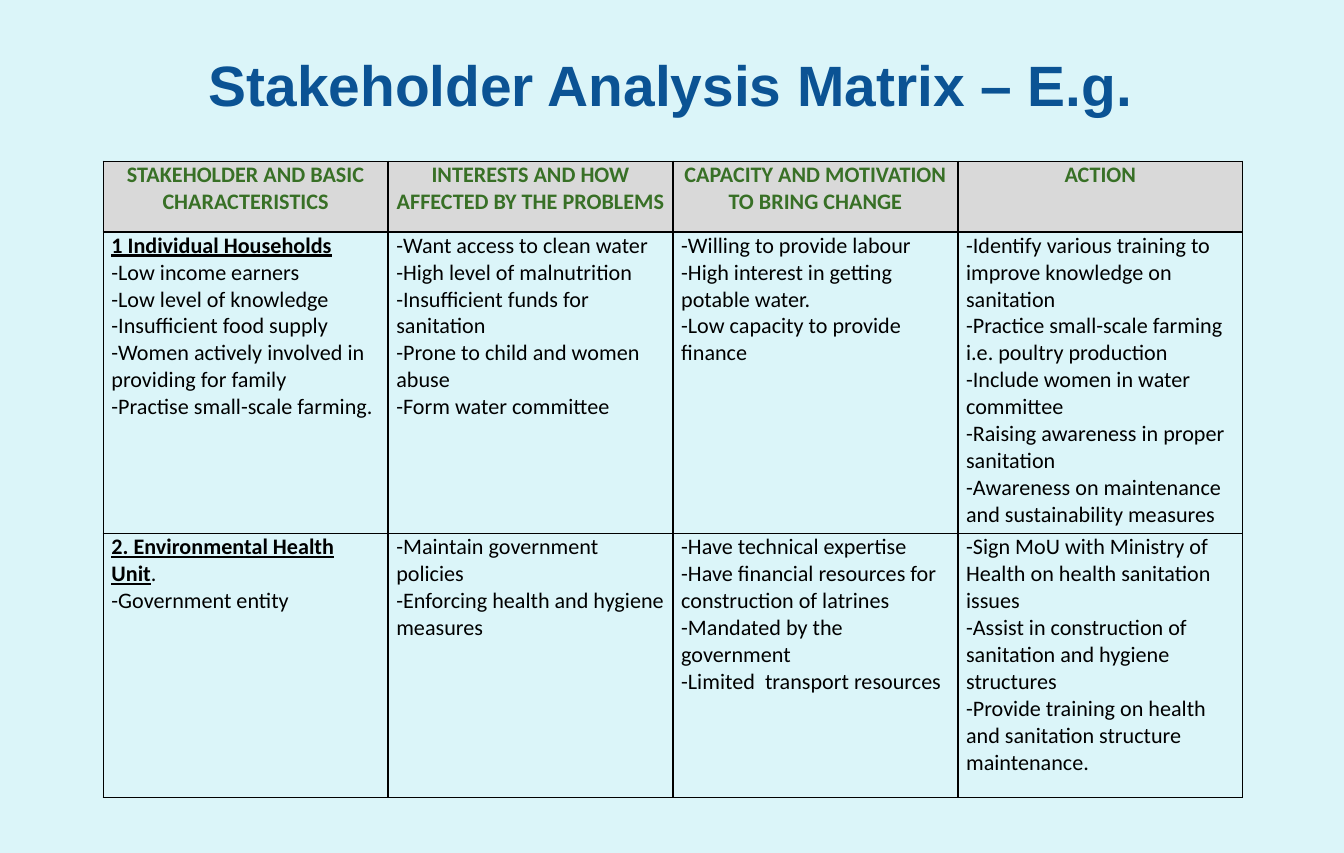
from lxml import etree
from pptx import Presentation
from pptx import util as u
from pptx.dml.color import RGBColor
from pptx.enum import text
from pptx.oxml import ns

# Content: a heading is (underlined text, plain ending)
TITLE = "Stakeholder Analysis Matrix – E.g."
HEADERS = [
    "STAKEHOLDER AND BASIC CHARACTERISTICS",
    "INTERESTS AND HOW AFFECTED BY THE PROBLEMS",
    "CAPACITY AND MOTIVATION TO BRING CHANGE",
    "ACTION",
]
STAKEHOLDERS = [
    [
        [("1 Individual Households", ""),
         "-Low income earners",
         "-Low level of knowledge",
         "-Insufficient food supply",
         "-Women actively involved in providing for family",
         "-Practise small-scale farming."],
        ["-Want access to clean water",
         "-High level of malnutrition",
         "-Insufficient funds for sanitation",
         "-Prone to child and women abuse",
         "-Form water committee"],
        ["-Willing to provide labour",
         "-High interest in getting potable water.",
         "-Low capacity to provide finance"],
        ["-Identify various training to improve knowledge on sanitation",
         "-Practice small-scale farming i.e. poultry production",
         "-Include women in water committee",
         "-Raising awareness in proper sanitation",
         "-Awareness on maintenance and sustainability measures"],
    ],
    [
        [("2. Environmental Health Unit", "."),
         "-Government entity"],
        ["-Maintain government policies",
         "-Enforcing health and hygiene measures"],
        ["-Have technical expertise",
         "-Have financial resources for construction of latrines",
         "-Mandated by the government",
         "-Limited  transport resources"],
        ["-Sign MoU with Ministry of Health on health sanitation issues",
         "-Assist in construction of sanitation and hygiene structures",
         "-Provide training on health and sanitation structure maintenance."],
    ],
]


class Theme:
    page = "DBF5F9"
    title = "0B5394"
    header = "387026"
    header_fill = "D9D9D9"
    ink = "000000"
    title_font, title_size = "Arial", 36
    body_font, body_size = "Calibri", 14
    border = 1


# Layout, in points
PAGE_WIDTH, PAGE_HEIGHT = 850.5, 540
TITLE_BOX = (89.3, 18, 670.3, 70.6)
TABLE_LEFT, TABLE_TOP, TABLE_WIDTH = 65.3, 102.2, 721.2
ROW_HEIGHTS = [44.8, 190.9, 167.2]
CELL_MARGIN = 5.2


def style(font, name, size, color, bold=False):
    font.name, font.size, font.bold = name, u.Pt(size), bold
    font.color.rgb = RGBColor.from_string(color)


def add_borders(cell):
    properties = cell._tc.get_or_add_tcPr()
    for index, side in enumerate(("a:lnL", "a:lnR", "a:lnT", "a:lnB")):
        line = etree.Element(ns.qn(side), w=str(u.Pt(Theme.border)))
        fill = etree.SubElement(line, ns.qn("a:solidFill"))
        etree.SubElement(fill, ns.qn("a:srgbClr"), val=Theme.ink)
        properties.insert(index, line)


def fill_cell(cell, lines, is_header):
    cell.margin_left = cell.margin_right = u.Pt(CELL_MARGIN)
    cell.margin_top = cell.margin_bottom = 0
    cell.vertical_anchor = text.MSO_ANCHOR.TOP
    if is_header:
        cell.fill.solid()
        cell.fill.fore_color.rgb = RGBColor.from_string(Theme.header_fill)
    else:
        cell.fill.background()
    add_borders(cell)
    for index, line in enumerate(lines):
        frame = cell.text_frame
        para = frame.paragraphs[0] if index == 0 else frame.add_paragraph()
        para.alignment = text.PP_ALIGN.CENTER if is_header else text.PP_ALIGN.LEFT
        color = Theme.header if is_header else Theme.ink
        style(para.font, Theme.body_font, Theme.body_size, color, is_header)
        if isinstance(line, tuple):
            for part, marked in zip(line, (True, False)):
                if part:
                    span = para.add_run()
                    span.text = part
                    style(span.font, Theme.body_font, Theme.body_size, color, marked)
                    span.font.underline = marked
        else:
            para.text = line


def main():
    deck = Presentation()
    deck.slide_width, deck.slide_height = u.Pt(PAGE_WIDTH), u.Pt(PAGE_HEIGHT)
    page = deck.slides.add_slide(deck.slide_layouts[6])
    page.background.fill.solid()
    page.background.fill.fore_color.rgb = RGBColor.from_string(Theme.page)

    # Title
    box = page.shapes.add_textbox(*map(u.Pt, TITLE_BOX))
    box.text_frame.word_wrap = True
    box.text_frame.vertical_anchor = text.MSO_ANCHOR.MIDDLE
    para = box.text_frame.paragraphs[0]
    para.text = TITLE
    para.alignment = text.PP_ALIGN.CENTER
    style(para.font, Theme.title_font, Theme.title_size, Theme.title, True)

    # Matrix
    rows = [[[header] for header in HEADERS]] + STAKEHOLDERS
    table = page.shapes.add_table(
        len(rows), len(HEADERS), u.Pt(TABLE_LEFT), u.Pt(TABLE_TOP),
        u.Pt(TABLE_WIDTH), u.Pt(sum(ROW_HEIGHTS))).table
    table.first_row = True
    table.horz_banding = False
    for column in table.columns:
        column.width = u.Pt(TABLE_WIDTH / len(HEADERS))
    for r, (height, row) in enumerate(zip(ROW_HEIGHTS, rows)):
        table.rows[r].height = u.Pt(height)
        for c, lines in enumerate(row):
            fill_cell(table.cell(r, c), lines, r == 0)

    deck.save("out.pptx")


if __name__ == "__main__":
    main()
